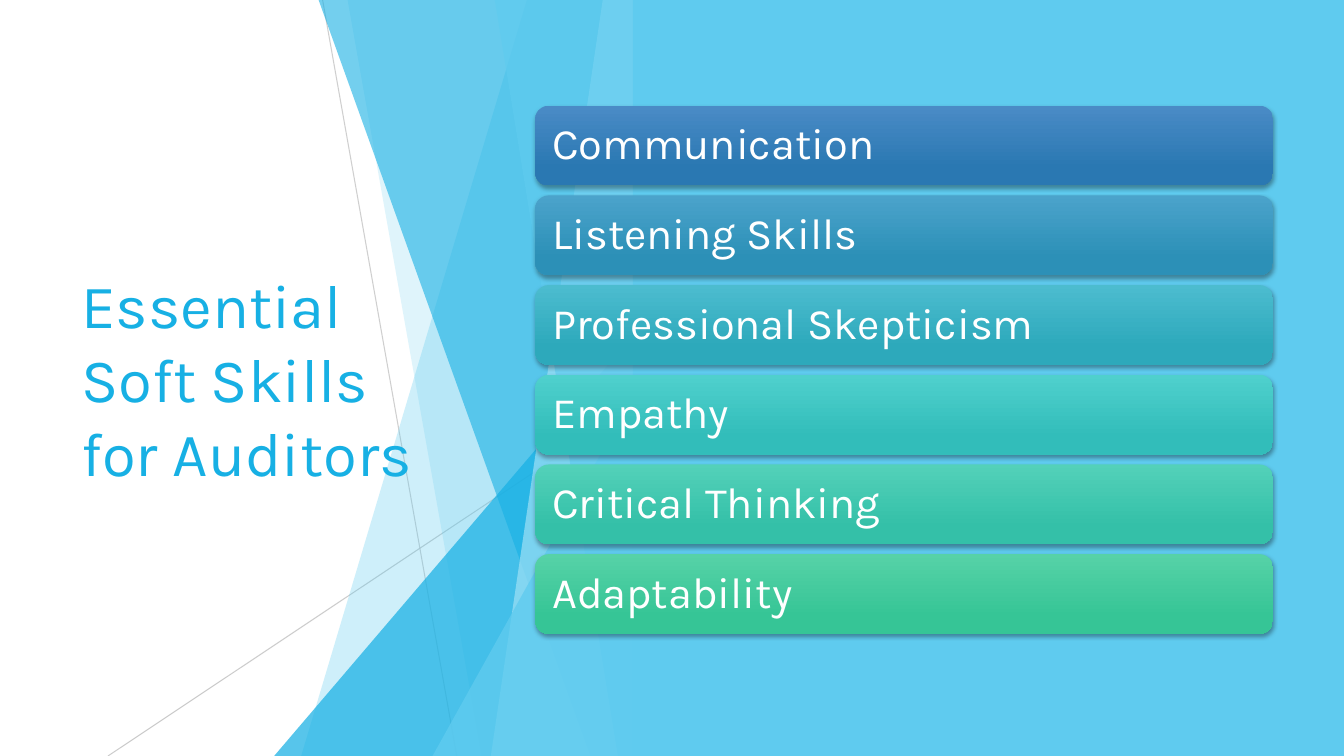
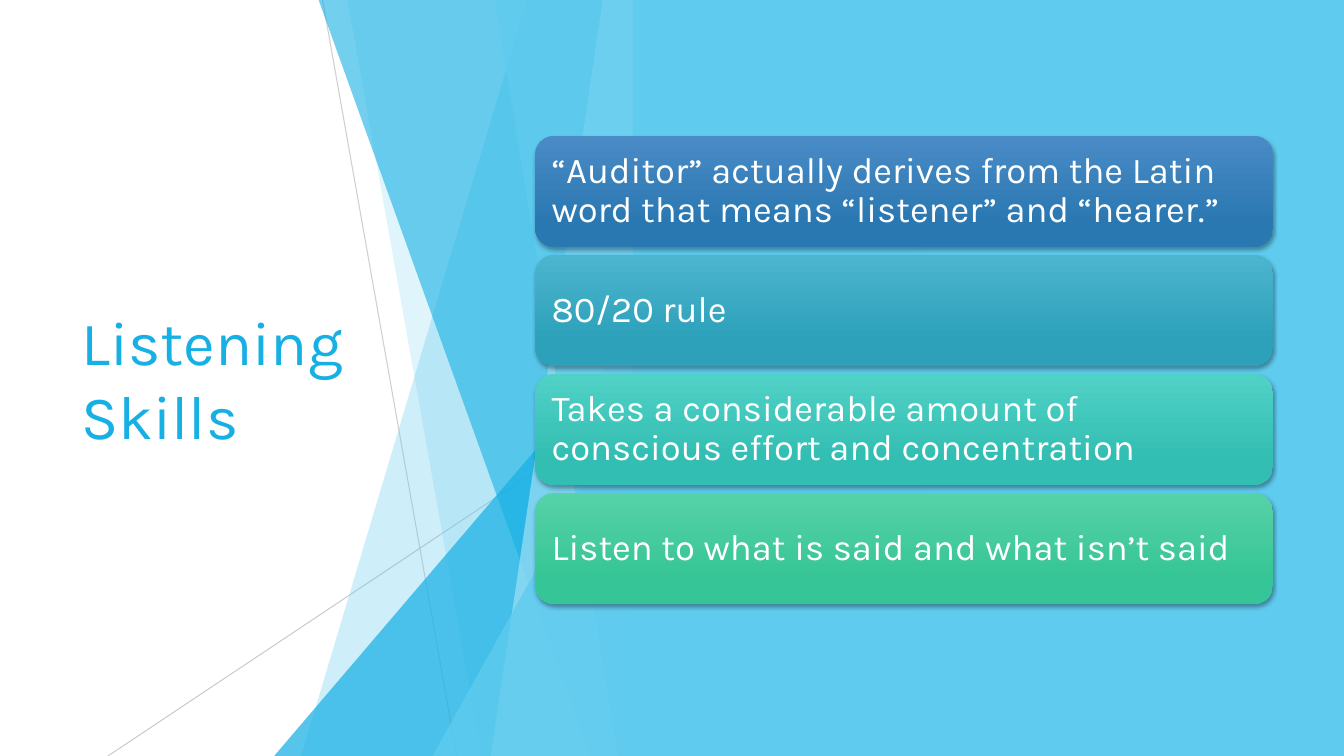
"""Build two slides on soft skills for auditors, with a faceted backdrop and stacked bars."""
from dataclasses import dataclass

from lxml import etree
from pptx import Presentation
from pptx import util as u
from pptx.dml import color
from pptx.enum import shapes, text
from pptx.oxml import ns


@dataclass(frozen=True)
class Theme:
    font: str = "Karla"
    white: str = "FFFFFF"
    sky: str = "5FCBEF"
    azure: str = "17B0E4"
    pale: str = "9FE0F5"
    grey: str = "BFBFBF"
    shadow: str = "000000"
    blue: tuple = ("4A8BC6", "2A78B2")
    green: tuple = ("56D2A7", "36C596")
    six_steps: tuple = (blue, ("4BA3CB", "2C90B7"), ("4CBCCF", "2DA9BB"),
                        ("4FD0CD", "32BDBA"), ("53D1B9", "34C0A8"), green)
    four_steps: tuple = (blue, ("4CB4CE", "2DA1BA"), ("50D1C6", "33BEB3"), green)
    title_size: int = 44
    skill_size: int = 31
    point_size: int = 26


WIDTH, HEIGHT = 33.87, 19.05
PANEL_LEFT = 15.95
BAR_LEFT, BAR_WIDTH, STACK_CENTRE = 13.49, 18.59, 9.32


class Deck:
    def __init__(self, theme):
        self.theme = theme
        self.show = Presentation()
        self.show.slide_width, self.show.slide_height = u.Cm(WIDTH), u.Cm(HEIGHT)
        self.slide = None

    def rgb(self, code):
        return color.RGBColor.from_string(code)

    def fade(self, part, opacity):
        for tint in part._element.spPr.iter(ns.qn("a:srgbClr")):
            etree.SubElement(tint, ns.qn("a:alpha"), val=str(opacity * 1000))

    def paint(self, part, code, opacity=100):
        part.shadow.inherit = False
        part.line.fill.background()
        part.fill.solid()
        part.fill.fore_color.rgb = self.rgb(code)
        if opacity < 100:
            self.fade(part, opacity)

    def preset(self, kind, left, top, width, height):
        return self.slide.shapes.add_shape(
            kind, u.Cm(left), u.Cm(top), u.Cm(width), u.Cm(height))

    def set_words(self, frame, words, size, code):
        frame.word_wrap = True
        frame.vertical_anchor = text.MSO_ANCHOR.MIDDLE
        paragraph = frame.paragraphs[0]
        paragraph.text = words
        paragraph.alignment = text.PP_ALIGN.LEFT
        paragraph.font.name = self.theme.font
        paragraph.font.size = u.Pt(size)
        paragraph.font.color.rgb = self.rgb(code)
        return paragraph

    def ray(self, start, end, opacity):
        line = self.slide.shapes.add_connector(
            shapes.MSO_CONNECTOR.STRAIGHT, *map(u.Cm, start + end))
        line.line.color.rgb = self.rgb(self.theme.grey)
        line.line.width = u.Pt(0.75)
        self.fade(line, opacity)
        etree.SubElement(line._element.spPr, ns.qn("a:effectLst"))

    def facet(self, top_left, bottom_left, code, opacity):
        outline = self.slide.shapes.build_freeform(u.Cm(top_left), 0)
        corners = ((PANEL_LEFT, 0), (PANEL_LEFT, HEIGHT), (bottom_left, HEIGHT))
        outline.add_line_segments([(u.Cm(x), u.Cm(y)) for x, y in corners])
        self.paint(outline.convert_to_shape(), code, opacity)

    def wedge(self, left, top, code, opacity):
        wedge = self.preset(shapes.MSO_SHAPE.ISOSCELES_TRIANGLE,
                            left, top, PANEL_LEFT - left, HEIGHT - top)
        wedge.adjustments[0] = 1
        self.paint(wedge, code, opacity)

    def backdrop(self):
        theme = self.theme
        self.ray((8.13, 0), (11.51, HEIGHT), 75)
        self.ray((PANEL_LEFT, 10.24), (2.72, HEIGHT), 80)
        self.facet(13.28, 7.59, theme.sky, 30)
        self.facet(8.76, 12.14, theme.sky, 20)
        self.wedge(6.91, 8.46, theme.azure, 72)
        self.facet(8.03, 14.88, theme.azure, 60)
        self.facet(15.19, 12.37, theme.pale, 70)
        self.facet(12.47, 15.57, theme.sky, 65)
        self.wedge(10.9, 9.98, theme.sky, 80)
        panel = self.preset(shapes.MSO_SHAPE.RECTANGLE,
                            PANEL_LEFT, 0, WIDTH - PANEL_LEFT, HEIGHT)
        self.paint(panel, theme.sky)

    def title(self, words):
        box = self.slide.shapes.add_textbox(u.Cm(1.8), u.Cm(3.84), u.Cm(9.86), u.Cm(11.38))
        self.set_words(box.text_frame, words, self.theme.title_size, self.theme.azure)

    def bar(self, words, top, height, size, shades):
        bar = self.preset(shapes.MSO_SHAPE.ROUNDED_RECTANGLE,
                          BAR_LEFT, top, BAR_WIDTH, height)
        bar.line.fill.background()
        bar.fill.gradient()
        bar.fill.gradient_angle = 270
        for stop, shade, position in zip(bar.fill.gradient_stops, shades, (0, 0.78)):
            stop.color.rgb = self.rgb(shade)
            stop.position = position
        self.drop_shadow(bar)
        frame = bar.text_frame
        inset = int(u.Pt(size) * 0.3)
        frame.margin_left = frame.margin_right = inset
        frame.margin_top = frame.margin_bottom = inset
        self.set_words(frame, words, size, self.theme.white).line_spacing = 0.9

    def drop_shadow(self, part):
        part.shadow.inherit = False
        effects = part._element.spPr.find(ns.qn("a:effectLst"))
        shadow = etree.SubElement(
            effects, ns.qn("a:outerShdw"), blurRad=str(u.Pt(3)), dist=str(u.Pt(2)),
            dir="5400000", algn="ctr", rotWithShape="0")
        tint = etree.SubElement(shadow, ns.qn("a:srgbClr"), val=self.theme.shadow)
        etree.SubElement(tint, ns.qn("a:alpha"), val="35000")

    def stack(self, entries, height, pitch, size, steps):
        first = STACK_CENTRE - ((len(entries) - 1) * pitch + height) / 2
        for row, (words, shades) in enumerate(zip(entries, steps)):
            self.bar(words, first + row * pitch, height, size, shades)

    def add_slide(self, heading):
        self.slide = self.show.slides.add_slide(self.show.slide_layouts[6])
        self.backdrop()
        self.title(heading)


def main():
    theme = Theme()
    deck = Deck(theme)

    deck.add_slide("Essential Soft Skills\vfor Auditors")
    skills = ("Communication", "Listening Skills", "Professional Skepticism",
              "Empathy", "Critical Thinking", "Adaptability")
    deck.stack(skills, 2.01, 2.26, theme.skill_size, theme.six_steps)

    deck.add_slide("Listening Skills")
    points = ("“Auditor” actually derives from the Latin word that means “listener” and “hearer.”",
              "80/20 rule",
              "Takes a considerable amount of conscious effort and concentration",
              "Listen to what is said and what isn’t said")
    deck.stack(points, 2.79, 3, theme.point_size, theme.four_steps)

    deck.show.save("out.pptx")


if __name__ == "__main__":
    main()
